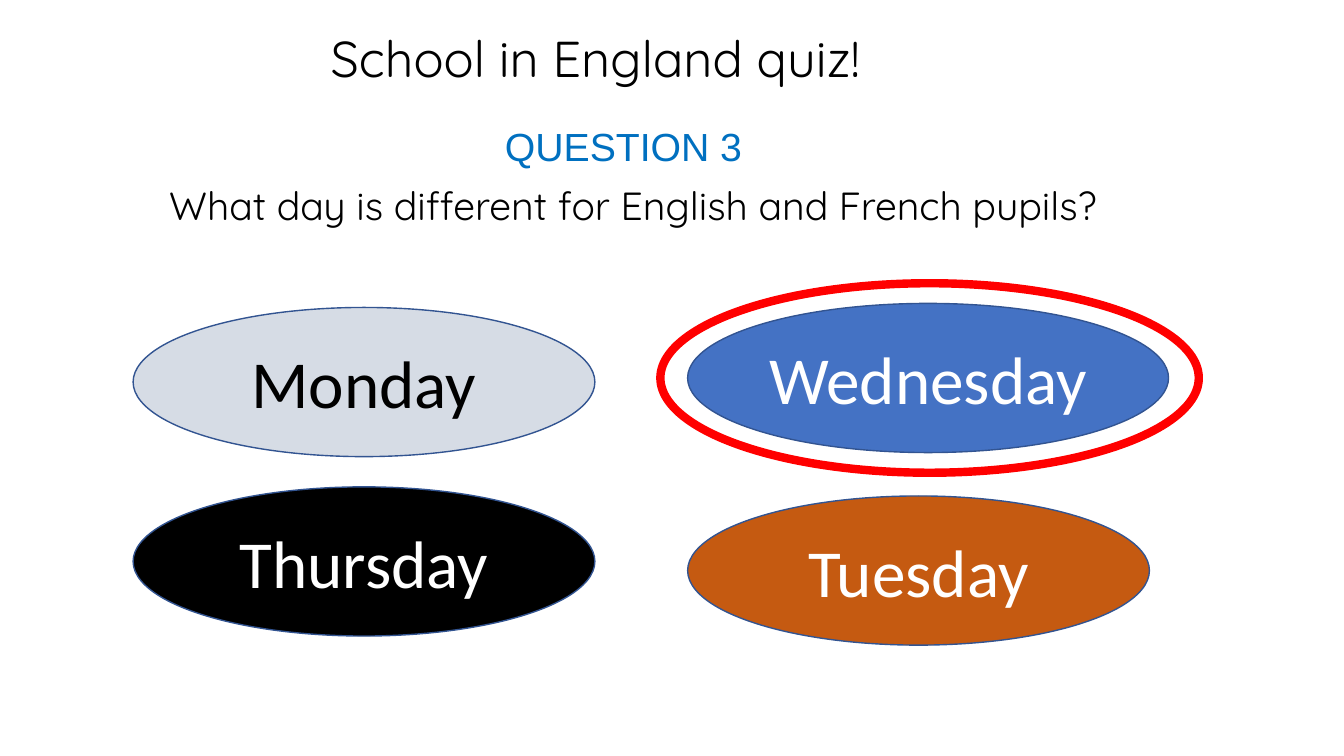
from pptx import Presentation
from pptx.dml.color import RGBColor
from pptx.enum import shapes, text
from pptx.util import Inches, Pt

OUTLINE = "325491"
ANSWERS = [
    ("Monday", 1.32, 3.05, 4.58, "D6DCE5", "000000"),
    ("Wednesday", 6.82, 3.01, 4.77, "4472C4", "FFFFFF"),
    ("Thursday", 1.32, 4.83, 4.58, "000000", "FFFFFF"),
    ("Tuesday", 6.82, 4.92, 4.58, "C55A11", "FFFFFF"),
]


def color(value):
    return RGBColor.from_string(value)


def write(box, words, size, font="Quicksand", ink="000000",
          align=text.PP_ALIGN.LEFT, anchor=text.MSO_ANCHOR.TOP):
    frame = box.text_frame
    frame.word_wrap = True
    frame.auto_size = text.MSO_AUTO_SIZE.NONE
    frame.vertical_anchor = anchor
    para = frame.paragraphs[0]
    para.alignment = align
    span = para.add_run()
    span.text = words
    span.font.name = font
    span.font.size = Pt(size)
    span.font.color.rgb = color(ink)


def add_title(page, words, left, top, width, height):
    title = page.shapes.title
    title.left, title.top = Inches(left), Inches(top)
    title.width, title.height = Inches(width), Inches(height)
    write(title, words, 36)


def add_label(page, words, left, top, width, height, **style):
    box = page.shapes.add_textbox(
        Inches(left), Inches(top), Inches(width), Inches(height))
    write(box, words, 28, **style)


def add_ellipse(page, left, top, width, height, line, weight, fill=None):
    ellipse = page.shapes.add_shape(
        shapes.MSO_SHAPE.OVAL,
        Inches(left), Inches(top), Inches(width), Inches(height))
    ellipse.shadow.inherit = False
    if fill:
        ellipse.fill.solid()
        ellipse.fill.fore_color.rgb = color(fill)
    else:
        ellipse.fill.background()
    ellipse.line.color.rgb = color(line)
    ellipse.line.width = Pt(weight)
    return ellipse


def add_answer(page, day, left, top, width, fill, ink):
    ellipse = add_ellipse(page, left, top, width, 1.48, OUTLINE, 1, fill)
    write(ellipse, day, 48, font="Calibri", ink=ink,
          align=text.PP_ALIGN.CENTER, anchor=text.MSO_ANCHOR.MIDDLE)


def main():
    deck = Presentation()
    deck.slide_width, deck.slide_height = Inches(13.33), Inches(7.5)
    page = deck.slides.add_slide(deck.slide_layouts.get_by_name("Title Only"))

    add_title(page, "School in England quiz!", 3.18, 0.22, 8.62, 0.71)
    add_label(page, "QUESTION 3", 4.91, 1.16, 3.37, 0.57,
              font="Arial", ink="0070C0")
    add_label(page, "What day is different for English and French pupils?",
              1.58, 1.75, 9.95, 0.57)
    for answer in ANSWERS:
        add_answer(page, *answer)
    add_ellipse(page, 6.55, 2.81, 5.34, 1.88, "FF0000", 6)

    deck.save("out.pptx")


if __name__ == "__main__":
    main()
